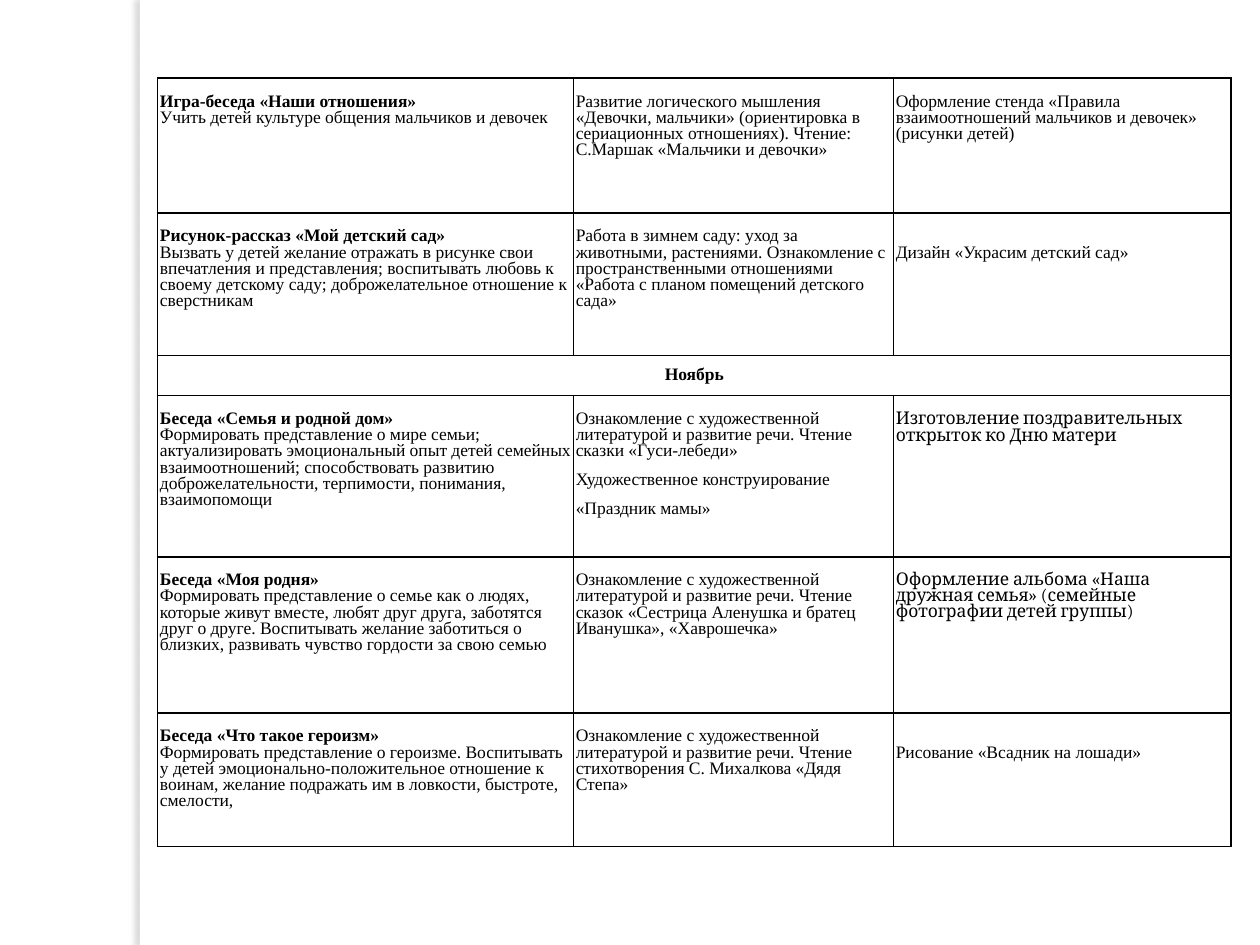
from lxml import etree
from pptx import Presentation, util as u
from pptx.dml.color import RGBColor
from pptx.enum import shapes, text
from pptx.oxml import parse_xml
from pptx.oxml.ns import nsdecls

BLACK = RGBColor(0, 0, 0)
WHITE = RGBColor(255, 255, 255)
SHADOW = RGBColor(0x7A, 0x72, 0x76)
SERIF, ALT_SERIF = "Times New Roman", "Cambria"
TIGHT, TIGHT_ALT, LOOSE = u.Pt(9.3), u.Pt(9.6), 1.5
TOP_GAP = {TIGHT: 0.13, TIGHT_ALT: 0.13, LOOSE: 0.16}

COLUMN_WIDTHS = [3.3, 2.54, 2.68]
ROW_HEIGHTS = [1.07, 1.13, 0.32, 1.28, 1.24, 1.06]
MONTH_ROW, MONTH = 2, "Ноябрь"


def plain(line, spacing=TIGHT, font=SERIF):
    return [(line, spacing, font, False)]


def lesson(title, goal):
    return [(title, TIGHT, SERIF, True)] + plain(goal)


LESSONS = [
    [lesson("Игра-беседа «Наши отношения»",
            "Учить детей культуре общения мальчиков и девочек"),
     plain("Развитие логического мышления «Девочки, мальчики» (ориентировка в "
           "сериационных отношениях). Чтение: С.Маршак «Мальчики и девочки»"),
     plain("Оформление стенда «Правила взаимоотношений мальчиков и девочек» "
           "(рисунки детей)")],
    [lesson("Рисунок-рассказ «Мой детский сад»",
            "Вызвать у детей желание отражать в рисунке свои впечатления и "
            "представления; воспитывать любовь к своему детскому саду; "
            "доброжелательное отношение к сверстникам"),
     plain("Работа в зимнем саду: уход за животными, растениями. Ознакомление с "
           "пространственными отношениями «Работа с планом помещений детского сада»"),
     plain("Дизайн «Украсим детский сад»", LOOSE)],
    [lesson("Беседа «Семья и родной дом»",
            "Формировать представление о мире семьи; актуализировать "
            "эмоциональный опыт детей семейных взаимоотношений; способствовать "
            "развитию доброжелательности, терпимости, понимания, взаимопомощи"),
     plain("Ознакомление с художественной литературой и развитие речи. Чтение "
           "сказки «Гуси-лебеди»")
     + plain("Художественное конструирование «Праздник мамы»", LOOSE),
     plain("Изготовление поздравительных открыток ко Дню матери",
           TIGHT_ALT, ALT_SERIF)],
    [lesson("Беседа «Моя родня»",
            "Формировать представление о семье как о людях, которые живут вместе, "
            "любят друг друга, заботятся друг о друге. Воспитывать желание "
            "заботиться о близких, развивать чувство гордости за свою семью"),
     plain("Ознакомление с художественной литературой и развитие речи. Чтение "
           "сказок «Сестрица Аленушка и братец Иванушка», «Хаврошечка»"),
     plain("Оформление альбома «Наша дружная семья» (семейные фотографии детей "
           "группы)", TIGHT, ALT_SERIF)],
    [lesson("Беседа «Что такое героизм»",
            "Формировать представление о героизме. Воспитывать у детей "
            "эмоционально-положительное отношение к воинам, желание подражать им "
            "в ловкости, быстроте, смелости,"),
     plain("Ознакомление с художественной литературой и развитие речи. Чтение "
           "стихотворения С. Михалкова «Дядя Степа»"),
     plain("Рисование «Всадник на лошади»", LOOSE)],
]


def add_side_strip(slide, height):
    strip = slide.shapes.add_shape(
        shapes.MSO_SHAPE.RECTANGLE, u.Inches(1.11), 0, u.Inches(0.08), height)
    strip.fill.solid()
    strip.fill.fore_color.rgb = WHITE
    strip.line.fill.background()
    strip.shadow.inherit = False
    effects = strip._element.spPr.find(
        "{http://schemas.openxmlformats.org/drawingml/2006/main}effectLst")
    effects.append(parse_xml(
        f'<a:outerShdw {nsdecls("a")} blurRad="{u.Pt(3)}" dist="{u.Pt(3)}" '
        f'dir="10800000" rotWithShape="0"><a:srgbClr val="{SHADOW}">'
        '<a:alpha val="25000"/></a:srgbClr></a:outerShdw>'))


def frame_cell(cell):
    cell.fill.background()
    cell.margin_left = cell.margin_right = u.Inches(0.02)
    cell.margin_top = cell.margin_bottom = 0
    properties = cell._tc.get_or_add_tcPr()
    for position, side in enumerate("LRTB"):
        properties.insert(position, parse_xml(
            f'<a:ln{side} {nsdecls("a")} w="{u.Pt(1)}"><a:solidFill>'
            f'<a:srgbClr val="{BLACK}"/></a:solidFill></a:ln{side}>'))


def write_cell(cell, lines):
    frame = cell.text_frame
    frame.text = "\n".join(line for line, *_ in lines)
    for paragraph, (_, spacing, font, bold) in zip(frame.paragraphs, lines):
        paragraph.line_spacing = spacing
        run_font = paragraph.runs[0].font
        run_font.name, run_font.size, run_font.bold = font, u.Pt(10), bold
        run_font.color.rgb = BLACK


def add_plan(slide):
    plan = slide.shapes.add_table(
        len(ROW_HEIGHTS), len(COLUMN_WIDTHS), u.Inches(1.25), u.Inches(0.62),
        u.Inches(sum(COLUMN_WIDTHS)), u.Inches(sum(ROW_HEIGHTS))).table
    plan.first_row = plan.horz_banding = False
    for column, width in zip(plan.columns, COLUMN_WIDTHS):
        column.width = u.Inches(width)
    for row, height in zip(plan.rows, ROW_HEIGHTS):
        row.height = u.Inches(height)
    for cell in plan.iter_cells():
        frame_cell(cell)

    month = plan.cell(MONTH_ROW, 0)
    month.merge(plan.cell(MONTH_ROW, len(COLUMN_WIDTHS) - 1))
    write_cell(month, [(MONTH, LOOSE, SERIF, True)])
    month.text_frame.paragraphs[0].alignment = text.PP_ALIGN.CENTER

    lesson_rows = [r for r in range(len(ROW_HEIGHTS)) if r != MONTH_ROW]
    for r, contents in zip(lesson_rows, LESSONS):
        for c, lines in enumerate(contents):
            cell = plan.cell(r, c)
            cell.margin_top = u.Inches(TOP_GAP[lines[0][1]])
            write_cell(cell, lines)


def main():
    deck = Presentation()
    deck.slide_width, deck.slide_height = u.Inches(10), u.Inches(7.5)
    slide = deck.slides.add_slide(deck.slide_layouts[6])
    add_side_strip(slide, deck.slide_height)
    add_plan(slide)
    deck.save("out.pptx")


if __name__ == "__main__":
    main()
